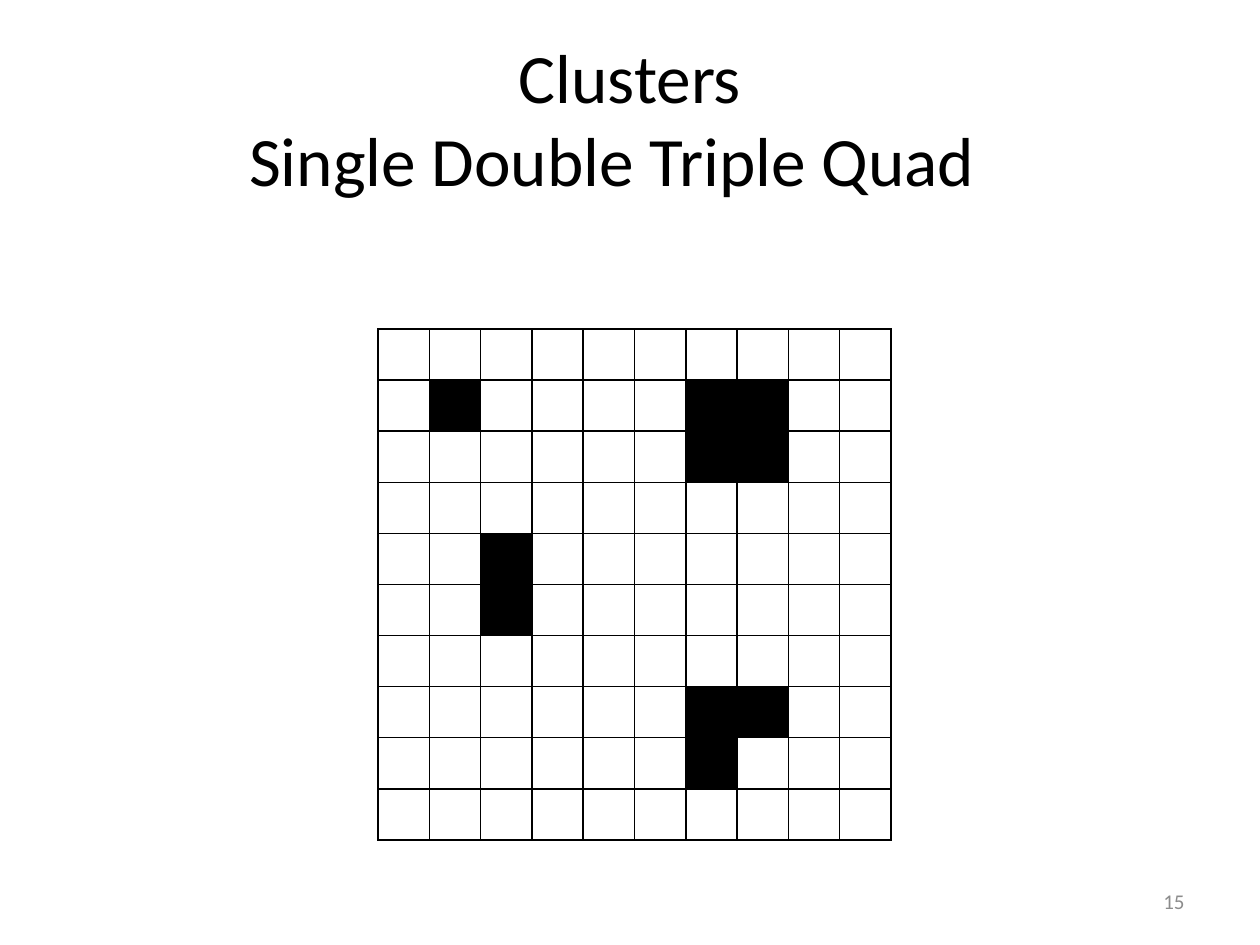
from lxml import etree
from pptx import Presentation
from pptx import util as u
from pptx.dml.color import RGBColor
from pptx.enum import text
from pptx.oxml.ns import qn

PX = 914400 / 126
BLACK = RGBColor(0, 0, 0)
WHITE = RGBColor(255, 255, 255)
GREY = RGBColor(0x8C, 0x8C, 0x8C)
FONT = "Calibri"
GRID_SIZE = 10
CLUSTERS = {
    "single": [(1, 1)],
    "double": [(4, 2), (5, 2)],
    "triple": [(7, 6), (7, 7), (8, 6)],
    "quad": [(1, 6), (1, 7), (2, 6), (2, 7)],
}


def px(length):
    return u.Emu(round(length * PX))


def add_text_box(page, left, top, width, height):
    box = page.shapes.add_textbox(px(left), px(top), px(width), px(height))
    box.text_frame.word_wrap = True
    box.text_frame.vertical_anchor = text.MSO_ANCHOR.MIDDLE
    return box.text_frame


def add_span(para, words, size, color):
    span = para.add_run()
    span.text = words
    span.font.name = FONT
    span.font.size = u.Pt(size)
    span.font.color.rgb = color


def add_title(page, left, top, width, height):
    shift = 36
    frame = add_text_box(page, left, top, width, height)
    frame.margin_left = px(13)
    frame.margin_right = px(13 + shift)
    heading = frame.paragraphs[0]
    heading._p.get_or_add_pPr().set("marL", str(px(shift)))
    kinds = frame.add_paragraph()
    for para, words in ((heading, "Clusters"), (kinds, "Single Double Triple Quad")):
        para.alignment = text.PP_ALIGN.CENTER
        add_span(para, words, 39.6, BLACK)


def add_page_number(page, left, top, width, height):
    para = add_text_box(page, left, top, width, height).paragraphs[0]
    para.alignment = text.PP_ALIGN.RIGHT
    add_span(para, "15", 12, GREY)


def add_borders(cell):
    properties = cell._tc.get_or_add_tcPr()
    for position, side in enumerate(("a:lnL", "a:lnR", "a:lnT", "a:lnB")):
        line = etree.Element(qn(side), w=str(u.Pt(1)))
        fill = etree.SubElement(line, qn("a:solidFill"))
        etree.SubElement(fill, qn("a:srgbClr"), val=str(BLACK))
        properties.insert(position, line)


def add_grid(page, left, top, width, height):
    frame = page.shapes.add_table(
        GRID_SIZE, GRID_SIZE, px(left), px(top), px(width), px(height))
    grid = frame.table
    grid.first_row = False
    grid.horz_banding = False
    for column in grid.columns:
        column.width = px(width / GRID_SIZE)
    for row in grid.rows:
        row.height = px(height / GRID_SIZE)
    filled = {place for places in CLUSTERS.values() for place in places}
    for row in range(GRID_SIZE):
        for column in range(GRID_SIZE):
            cell = grid.cell(row, column)
            cell.fill.solid()
            cell.fill.fore_color.rgb = BLACK if (row, column) in filled else WHITE
            cell.text_frame.paragraphs[0].font.size = u.Pt(12)
            add_borders(cell)


def main():
    deck = Presentation()
    deck.slide_width = px(1260)
    deck.slide_height = px(945)
    page = deck.slides.add_slide(deck.slide_layouts[6])
    add_title(page, 63, 38, 1134, 158)
    add_page_number(page, 903, 876, 294, 50)
    add_grid(page, 378, 329, 513, 511)
    deck.save("out.pptx")


if __name__ == "__main__":
    main()
